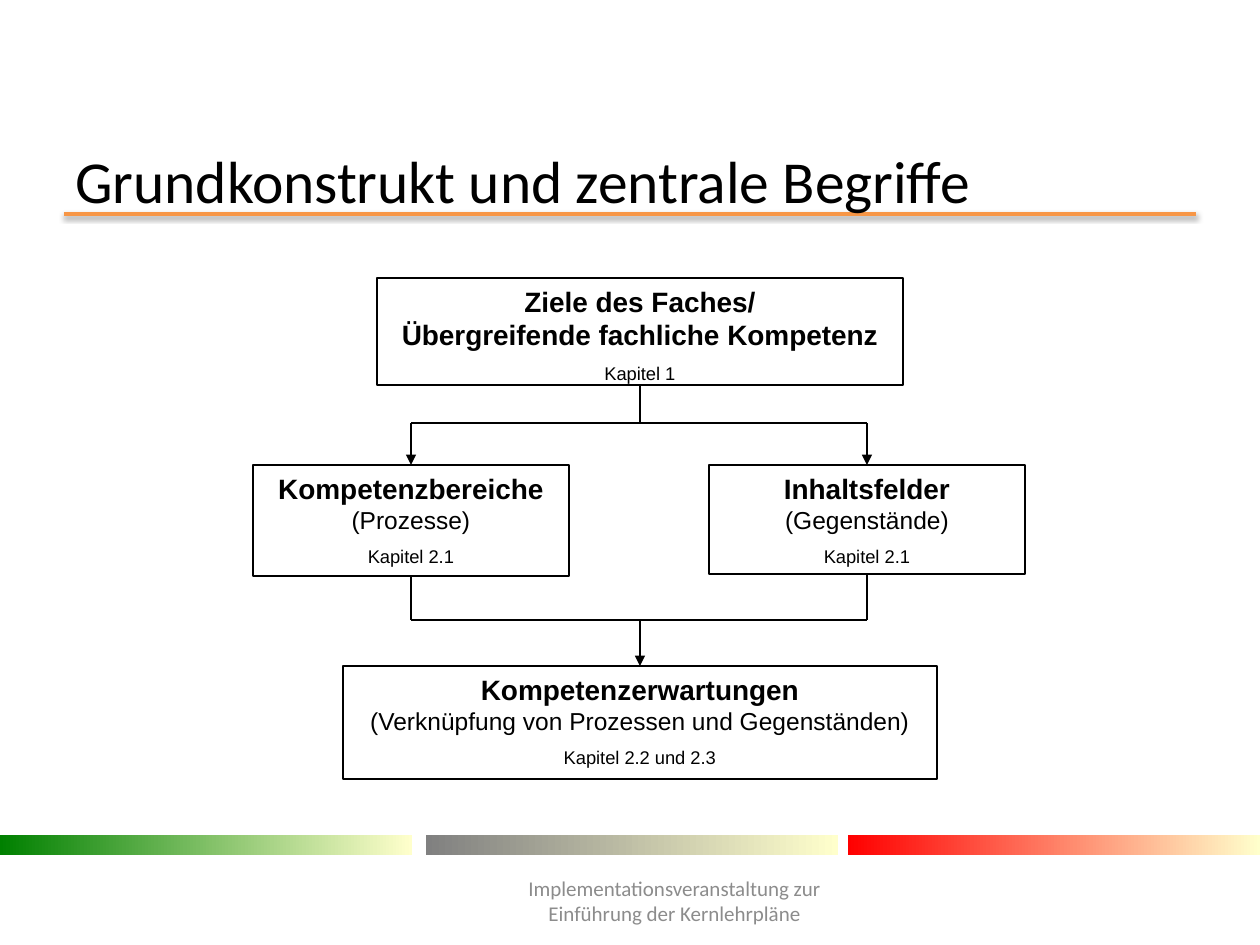
from lxml.etree import SubElement
from pptx import Presentation
from pptx.dml.color import RGBColor
from pptx.enum.shapes import MSO_CONNECTOR, MSO_SHAPE
from pptx.enum.text import MSO_ANCHOR, PP_ALIGN
from pptx.oxml.ns import qn
from pptx.util import Pt

SCALE = 914400 / 126
COLORS = {
    "text": "000000",
    "footer": "8C8C8C",
    "box": "FFFFFF",
    "rule": "F79646",
    "green": "008000",
    "gray": "808080",
    "red": "FF0000",
    "cream": "FFFFCC",
}
TOP, BOTTOM = 0, 2


def px(*lengths):
    """Turn pixel lengths into EMU."""
    return [round(length * SCALE) for length in lengths]


def color(name):
    """Look up a named colour."""
    return RGBColor.from_string(COLORS[name])


def add_text(frame, text, first=True, size=16, font="Arial", fill="text",
             bold=False, align=PP_ALIGN.CENTER, before=0):
    """Write one formatted paragraph into a text frame."""
    paragraph = frame.paragraphs[0] if first else frame.add_paragraph()
    paragraph.alignment = align
    paragraph.space_before = Pt(before)
    run = paragraph.add_run()
    run.text = text
    run.font.size = Pt(size)
    run.font.name = font
    run.font.bold = bold
    run.font.color.rgb = color(fill)


def add_label(slide, bounds, text, **style):
    """Add a vertically centred text box."""
    frame = slide.shapes.add_textbox(*px(*bounds)).text_frame
    frame.word_wrap = True
    frame.vertical_anchor = MSO_ANCHOR.MIDDLE
    add_text(frame, text, **style)


def add_box(slide, bounds, heading, detail, chapter, detail_style):
    """Add an outlined box with heading, detail and chapter lines."""
    shape = slide.shapes.add_shape(MSO_SHAPE.RECTANGLE, *px(*bounds))
    shape.shadow.inherit = False
    shape.fill.solid()
    shape.fill.fore_color.rgb = color("box")
    shape.line.color.rgb = color("text")
    shape.line.width = Pt(1.5)
    frame = shape.text_frame
    frame.word_wrap = True
    frame.vertical_anchor = MSO_ANCHOR.TOP
    add_text(frame, heading, bold=True)
    add_text(frame, detail, first=False, **detail_style)
    add_text(frame, chapter, first=False, size=10.5, before=6)
    return shape


def add_line(slide, start, end, fill="text", width=1.5, arrow=False,
             source=None, target=None):
    """Add a straight line, joined to boxes where given, and return its effect list."""
    line = slide.shapes.add_connector(MSO_CONNECTOR.STRAIGHT, *px(*start, *end))
    line.line.color.rgb = color(fill)
    line.line.width = Pt(width)
    if arrow:
        SubElement(line.line._get_or_add_ln(), qn("a:tailEnd"), type="triangle")
    if source is not None:
        line.begin_connect(source, BOTTOM)
    if target is not None:
        line.end_connect(target, TOP)
    return SubElement(line._element.spPr, qn("a:effectLst"))


def add_title_rule(slide):
    """Add the shaded line under the title."""
    effects = add_line(slide, (64, 214), (1196, 214), fill="rule", width=2)
    shadow = SubElement(effects, qn("a:outerShdw"), blurRad=str(Pt(3.1)),
                        dist=str(Pt(1.6)), dir="5400000", rotWithShape="0")
    tone = SubElement(shadow, qn("a:srgbClr"), val=COLORS["text"])
    SubElement(tone, qn("a:alpha"), val="38000")


def add_gradient_bar(slide, left, start):
    """Add a footer bar fading from a colour to cream."""
    bar = slide.shapes.add_shape(MSO_SHAPE.RECTANGLE, *px(left, 835, 412, 20))
    bar.shadow.inherit = False
    bar.line.fill.background()
    bar.fill.gradient()
    bar.fill.gradient_angle = 0
    for stop, name, position in zip(bar.fill.gradient_stops, (start, "cream"), (0, 1)):
        stop.color.rgb = color(name)
        stop.position = position


def add_diagram(slide):
    """Add the four boxes and the branching lines between them."""
    plain = {"size": 14}
    goals = add_box(slide, (377, 278, 526, 107), "Ziele des Faches/",
                    "Übergreifende fachliche Kompetenz", "Kapitel 1", {"bold": True})
    areas = add_box(slide, (253, 465, 316, 111), "Kompetenzbereiche",
                    "(Prozesse)", "Kapitel 2.1", plain)
    fields = add_box(slide, (709, 465, 316, 109), "Inhaltsfelder",
                     "(Gegenstände)", "Kapitel 2.1", plain)
    expectations = add_box(slide, (343, 666, 594, 113), "Kompetenzerwartungen",
                           "(Verknüpfung von Prozessen und Gegenständen)",
                           "Kapitel 2.2 und 2.3", plain)
    center, split, merge = 640, 423, 620
    add_line(slide, (center, 385), (center, split), source=goals)
    add_line(slide, (center, merge), (center, 666), arrow=True, target=expectations)
    for x, box, bottom in ((411, areas, 576), (867, fields, 574)):
        add_line(slide, (center, split), (x, split))
        add_line(slide, (x, split), (x, 465), arrow=True, target=box)
        add_line(slide, (x, bottom), (x, merge), source=box)
        add_line(slide, (x, merge), (center, merge))


def main():
    """Build and save the slide."""
    presentation = Presentation()
    presentation.slide_width, presentation.slide_height = px(1260, 945)
    slide = presentation.slides.add_slide(presentation.slide_layouts[6])
    add_title_rule(slide)
    for left, start in ((0, "green"), (426, "gray"), (848, "red")):
        add_gradient_bar(slide, left, start)
    add_label(slide, (63, 155, 1134, 49), "Grundkonstrukt und zentrale Begriffe",
              size=34, font="Calibri", align=PP_ALIGN.LEFT)
    add_label(slide, (471, 876, 407, 50),
              "Implementationsveranstaltung zur Einführung der Kernlehrpläne",
              size=12, font="Calibri", fill="footer")
    add_diagram(slide)
    presentation.save("out.pptx")


if __name__ == "__main__":
    main()
